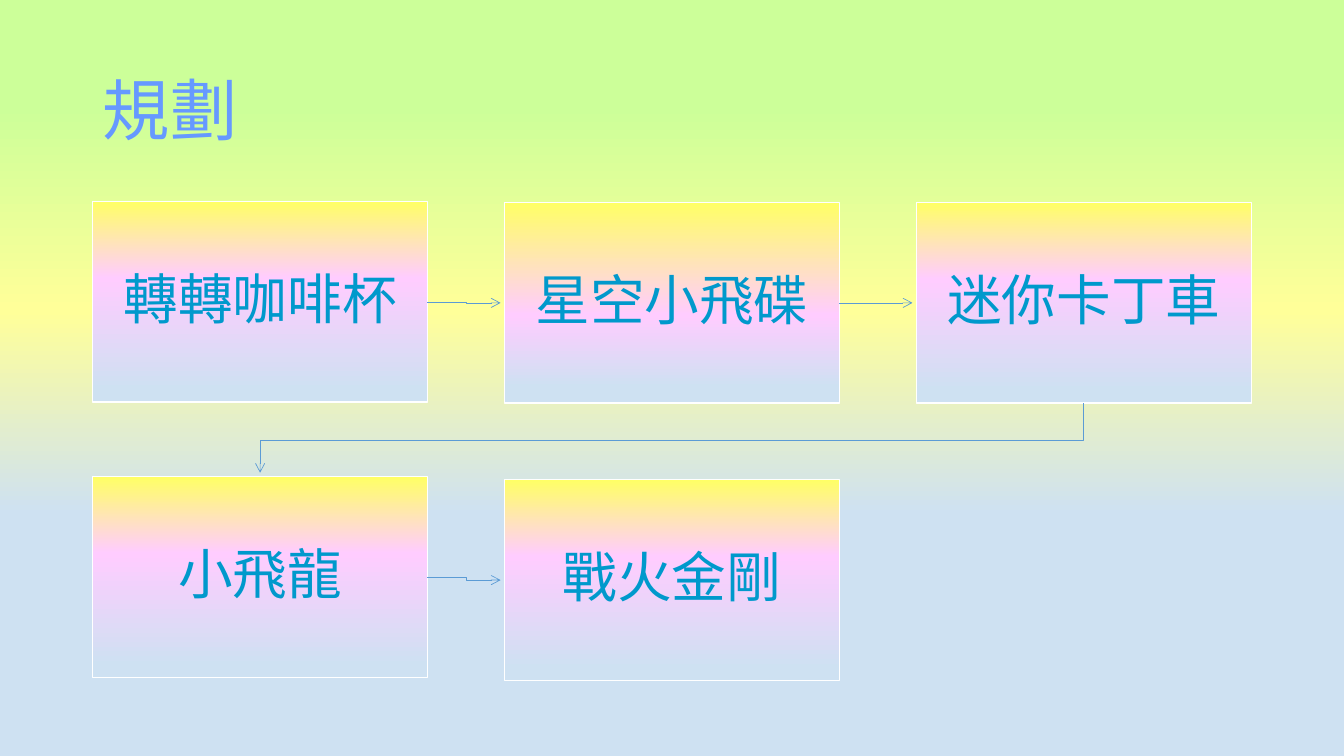
from dataclasses import dataclass

from lxml.etree import SubElement
from pptx import Presentation
from pptx.dml.color import RGBColor
from pptx.enum.shapes import MSO_CONNECTOR, MSO_SHAPE
from pptx.enum.text import MSO_ANCHOR, MSO_AUTO_SIZE, PP_ALIGN
from pptx.oxml.ns import qn
from pptx.util import Inches, Pt


@dataclass(frozen=True)
class Theme:
    title_color: str = "6699FF"
    step_color: str = "0099CC"
    border_color: str = "FFFFFF"
    arrow_color: str = "5B9BD5"
    background: tuple = ((14, "CCFF99"), (41, "FFFF99"), (68, "CEE1F2"))
    step_fill: tuple = ((0, "FFFF66"), (38, "FFCCFF"), (94, "CEE1F2"))
    soft_step_fill: tuple = ((0, "FFFF66"), (56, "FFCCFF"), (92, "CEE1F2"))
    title_size: int = 48
    step_size: int = 39
    font: str = "Noto Sans CJK JP"
    alternate_font: str = "Noto Sans CJK SC"


THEME = Theme()

# Step grid
LEFT, TOP = 0.92, 2
WIDTH, HEIGHT = 3.32, 1.99
COLUMN_STEP, ROW_STEP = 4.085, 2.73
ARROW_GAP = 0.04


def set_gradient(fill, element, stops):
    """Fill downwards with (percent, colour) stops."""
    fill.gradient()
    fill.gradient_angle = 270
    stop_list = element.find(".//" + qn("a:gsLst"))
    for old_stop in list(stop_list):
        stop_list.remove(old_stop)
    for percent, color in stops:
        stop = SubElement(stop_list, qn("a:gs"), pos=str(percent * 1000))
        SubElement(stop, qn("a:srgbClr"), val=color)


def write_text(shape, text, size, color, font_name, alignment):
    frame = shape.text_frame
    frame.text = text
    frame.word_wrap = True
    frame.auto_size = MSO_AUTO_SIZE.NONE
    frame.vertical_anchor = MSO_ANCHOR.MIDDLE
    paragraph = frame.paragraphs[0]
    paragraph.alignment = alignment
    paragraph.line_spacing = 0.9
    font = paragraph.font
    font.size = Pt(size)
    font.color.rgb = RGBColor.from_string(color)
    font.name = font_name
    # East Asian typeface
    SubElement(font._element, qn("a:ea"), typeface=font_name)


def add_title(slide, text):
    title = slide.shapes.title
    title.left, title.top = Inches(0.92), Inches(0.4)
    title.width, title.height = Inches(11.5), Inches(1.45)
    write_text(title, text, THEME.title_size, THEME.title_color,
               THEME.font, PP_ALIGN.LEFT)


def add_step(slide, text, column, row, drop=0, stops=THEME.step_fill,
             font_name=THEME.font):
    shape = slide.shapes.add_shape(
        MSO_SHAPE.RECTANGLE,
        Inches(LEFT + column * COLUMN_STEP), Inches(TOP + row * ROW_STEP + drop),
        Inches(WIDTH), Inches(HEIGHT))
    shape.shadow.inherit = False
    set_gradient(shape.fill, shape._element, stops)
    shape.line.color.rgb = RGBColor.from_string(THEME.border_color)
    shape.line.width = Pt(1)
    frame = shape.text_frame
    frame.margin_left = frame.margin_right = Inches(0.3)
    frame.margin_top = frame.margin_bottom = Inches(0.3)
    write_text(shape, text, THEME.step_size, THEME.step_color,
               font_name, PP_ALIGN.CENTER)
    return shape


def style_arrow(arrow):
    arrow.line.color.rgb = RGBColor.from_string(THEME.arrow_color)
    arrow.line.width = Pt(0.5)
    SubElement(arrow.line._get_or_add_ln(), qn("a:tailEnd"), type="arrow")


def add_bent_arrow(slide, points):
    builder = slide.shapes.build_freeform(*points[0])
    builder.add_line_segments(points[1:], close=False)
    arrow = builder.convert_to_shape()
    arrow.fill.background()
    arrow.shadow.inherit = False
    style_arrow(arrow)


def add_side_arrow(slide, source, target):
    """Arrow from a step's right side to the next step."""
    start_x = source.left + source.width
    start_y = source.top + source.height // 2
    end_x = target.left - Inches(ARROW_GAP)
    end_y = target.top + target.height // 2
    if start_y == end_y:
        arrow = slide.shapes.add_connector(
            MSO_CONNECTOR.STRAIGHT, start_x, start_y, end_x, end_y)
        arrow.begin_connect(source, 3)
        SubElement(arrow._element.spPr, qn("a:effectLst"))
        style_arrow(arrow)
    else:
        middle = (start_x + target.left) // 2
        add_bent_arrow(slide, [(start_x, start_y), (middle, start_y),
                               (middle, end_y), (end_x, end_y)])


def add_row_arrow(slide, source, target):
    """Arrow from the end of one row to the start of the next."""
    start_x = source.left + source.width // 2
    start_y = source.top + source.height
    end_x = target.left + target.width // 2
    middle = (start_y + target.top) // 2
    add_bent_arrow(slide, [(start_x, start_y), (start_x, middle),
                           (end_x, middle),
                           (end_x, target.top - Inches(ARROW_GAP))])


def main():
    presentation = Presentation()
    presentation.slide_width = Inches(13.33)
    presentation.slide_height = Inches(7.5)
    slide = presentation.slides.add_slide(presentation.slide_layouts[5])
    set_gradient(slide.background.fill, slide._element, THEME.background)
    add_title(slide, "規劃")

    # Steps
    cups = add_step(slide, "轉轉咖啡杯", 0, 0)
    saucer = add_step(slide, "星空小飛碟", 1, 0, drop=0.01,
                      stops=THEME.soft_step_fill)
    karts = add_step(slide, "迷你卡丁車", 2, 0, drop=0.01,
                     font_name=THEME.alternate_font)
    dragon = add_step(slide, "小飛龍", 0, 1)
    warrior = add_step(slide, "戰火金剛", 1, 1, drop=0.03)

    # Flow
    for source, target in ((cups, saucer), (saucer, karts), (dragon, warrior)):
        add_side_arrow(slide, source, target)
    add_row_arrow(slide, karts, dragon)

    presentation.save("out.pptx")


if __name__ == "__main__":
    main()
